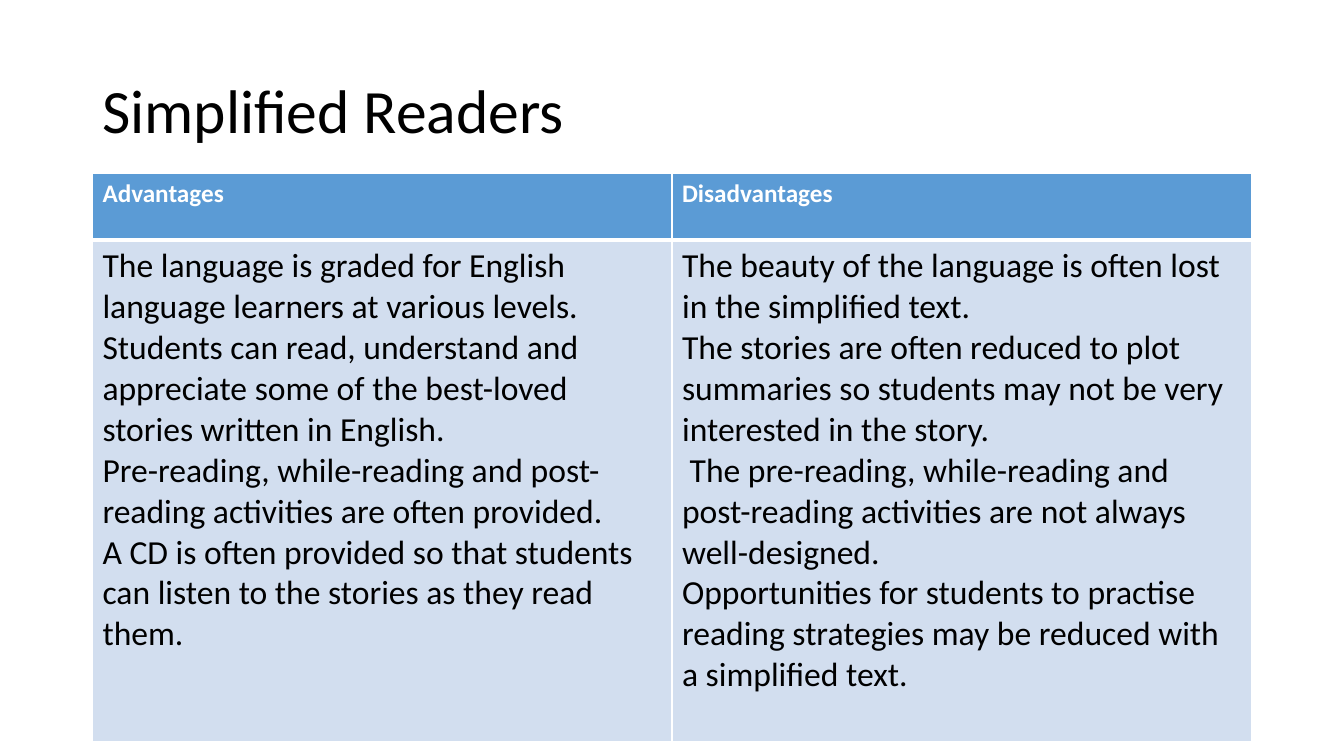
from lxml import etree
from pptx import Presentation
from pptx.dml.color import RGBColor
from pptx.enum.text import MSO_ANCHOR
from pptx.oxml.ns import qn
from pptx.util import Cm, Pt


def style_text(tf, size, color, bold=False):
    for p in tf.paragraphs:
        for r in p.runs:
            r.font.name = "Calibri"
            r.font.size = Pt(size)
            r.font.bold = bold
            r.font.color.rgb = RGBColor.from_string(color)


def add_border(cell, side, width):
    ln = etree.SubElement(cell._tc.get_or_add_tcPr(), qn(f"a:{side}"), w=str(Pt(width)))
    fill = etree.SubElement(ln, qn("a:solidFill"))
    etree.SubElement(fill, qn("a:srgbClr"), val="FFFFFF")


prs = Presentation()
prs.slide_width, prs.slide_height = Cm(33.87), Cm(19.05)
s = prs.slides.add_slide(prs.slide_layouts[6])

title = s.shapes.add_textbox(Cm(2.33), Cm(1.01), Cm(29.21), Cm(3.68))
tf = title.text_frame
tf.word_wrap = True
tf.vertical_anchor = MSO_ANCHOR.MIDDLE
tf.text = "Simplified Readers"
tf.paragraphs[0].line_spacing = 0.9
style_text(tf, 44, "000000")

columns = [
    ("Advantages", [
        "The language is graded for English language learners at various levels.",
        "Students can read, understand and appreciate some of the best-loved stories written in English.",
        "Pre-reading, while-reading and post-reading activities are often provided.",
        "A CD is often provided so that students can listen to the stories as they read them.",
    ]),
    ("Disadvantages", [
        "The beauty of the language is often lost in the simplified text.",
        "The stories are often reduced to plot summaries so students may not be very interested in the story.",
        " The pre-reading, while-reading and post-reading activities are not always well-designed.",
        "Opportunities for students to practise reading strategies may be reduced with a simplified text.",
    ]),
]

table = s.shapes.add_table(2, 2, Cm(2.33), Cm(4.38), Cm(29.21), Cm(14.3)).table
table.rows[0].height = Cm(1.67)
table.rows[1].height = Cm(12.63)

for col, (heading, points) in enumerate(columns):
    head, body = table.cell(0, col), table.cell(1, col)
    head.text_frame.text = heading
    body.text_frame.text = "\n".join(points)
    style_text(head.text_frame, 18, "FFFFFF", True)
    style_text(body.text_frame, 24, "000000")
    for cell, color, top, bottom in ((head, "5B9BD5", 1, 3), (body, "D2DEEF", 3, 1)):
        for side, width in (("lnL", 1), ("lnR", 1), ("lnT", top), ("lnB", bottom)):
            add_border(cell, side, width)
        cell.fill.solid()
        cell.fill.fore_color.rgb = RGBColor.from_string(color)

prs.save("out.pptx")
